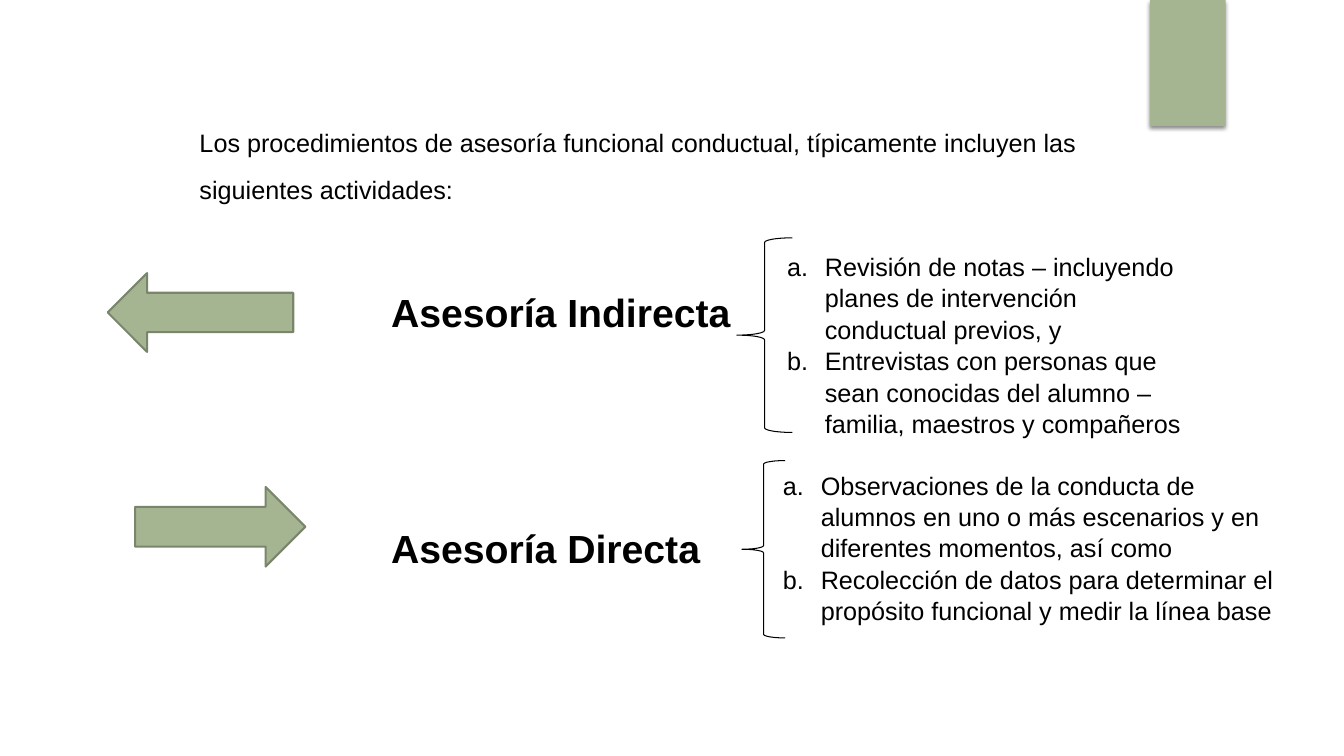
"""Build the slide on indirect and direct functional behaviour assessment."""
from dataclasses import dataclass

from lxml.etree import SubElement
from pptx import Presentation
from pptx.dml.color import RGBColor
from pptx.enum.shapes import MSO_SHAPE as Preset
from pptx.enum.text import MSO_AUTO_SIZE as AutoSize
from pptx.oxml.ns import qn
from pptx.shapes.autoshape import Shape
from pptx.slide import Slide
from pptx.text.text import TextFrame
from pptx.util import Pt


@dataclass(frozen=True)
class Theme:
    font: str = "Arial"
    sage: str = "A5B592"
    sage_edge: str = "7A866C"
    ink: str = "000000"
    body_size: float = 18
    heading_size: float = 28
    line_spacing: float = 1.04
    intro_spacing: float = 1.55
    heading_gap: float = 134
    list_indent: float = 27


@dataclass(frozen=True)
class Box:
    left: float
    top: float
    width: float
    height: float

    def lengths(self) -> tuple[Pt, Pt, Pt, Pt]:
        """Return the four lengths in points."""
        return Pt(self.left), Pt(self.top), Pt(self.width), Pt(self.height)


@dataclass(frozen=True)
class Assessment:
    heading: str
    arrow: Preset
    arrow_box: Box
    brace_box: Box
    list_box: Box
    activities: tuple[str, ...]


THEME = Theme()
INTRO = ("Los procedimientos de asesoría funcional conductual, "
         "típicamente incluyen las siguientes actividades:")
INTRO_BOX = Box(135.4, 75.6, 721.4, 68.4)
HEADINGS_BOX = Box(272.2, 200.9, 286.6, 211)
TAB_BOX = Box(821.5, 0, 54, 90)
ASSESSMENTS = (
    Assessment(
        "Asesoría Indirecta", Preset.LEFT_ARROW,
        Box(77, 195.1, 132.5, 56.2), Box(526.3, 169.9, 39.6, 139),
        Box(555.1, 175, 312.3, 159.8),
        ("Revisión de notas – incluyendo planes de intervención "
         "conductual previos, y",
         "Entrevistas con personas que sean conocidas del alumno – "
         "familia, maestros y compañeros"),
    ),
    Assessment(
        "Asesoría Directa", Preset.RIGHT_ARROW,
        Box(96.5, 347.8, 121.7, 56.9), Box(529.9, 329, 31, 126.7),
        Box(552.2, 331.2, 380.2, 138.2),
        ("Observaciones de la conducta de alumnos en uno o más escenarios "
         "y en diferentes momentos, así como",
         "Recolección de datos para determinar el propósito funcional "
         "y medir la línea base"),
    ),
)


def add_preset(slide: Slide, preset: Preset, box: Box, fill: str = "",
               edge: str = "", edge_width: float = 0) -> Shape:
    """Draw a preset shape; an empty colour means no fill or no line."""
    shape = slide.shapes.add_shape(preset, *box.lengths())
    shape.shadow.inherit = False
    if fill:
        shape.fill.solid()
        shape.fill.fore_color.rgb = RGBColor.from_string(fill)
    else:
        shape.fill.background()
    if edge:
        shape.line.color.rgb = RGBColor.from_string(edge)
        shape.line.width = Pt(edge_width)
    else:
        shape.line.fill.background()
    return shape


def add_tab(slide: Slide) -> None:
    """Draw the corner tab with its soft shadow."""
    tab = add_preset(slide, Preset.RECTANGLE, TAB_BOX, THEME.sage)
    effects = tab.element.spPr.find(qn("a:effectLst"))
    shadow = SubElement(effects, qn("a:outerShdw"), blurRad=str(Pt(3)),
                        dist=str(Pt(2)), dir="5400000", rotWithShape="0")
    color = SubElement(shadow, qn("a:srgbClr"), val=THEME.ink)
    SubElement(color, qn("a:alpha"), val="45000")


def add_text(slide: Slide, box: Box, lines: tuple[str, ...], size: float,
             spacing: float = THEME.line_spacing, bold: bool = False,
             lettered: bool = False) -> TextFrame:
    """Write one paragraph per line, lettered a., b. when asked."""
    frame = slide.shapes.add_textbox(*box.lengths()).text_frame
    frame.word_wrap = True
    frame.auto_size = AutoSize.SHAPE_TO_FIT_TEXT
    frame.text = "\n".join(lines)
    for paragraph in frame.paragraphs:
        paragraph.line_spacing = spacing
        if lettered:
            properties = paragraph._p.get_or_add_pPr()
            properties.set("marL", str(Pt(THEME.list_indent)))
            properties.set("indent", str(-Pt(THEME.list_indent)))
            SubElement(properties, qn("a:buFont"), typeface=THEME.font)
            SubElement(properties, qn("a:buAutoNum"), type="alphaLcPeriod")
        for run in paragraph.runs:
            run.font.name = THEME.font
            run.font.size = Pt(size)
            run.font.bold = bold
            run.font.color.rgb = RGBColor.from_string(THEME.ink)
    return frame


def add_assessment(slide: Slide, assessment: Assessment) -> None:
    """Draw the arrow, brace and activities of one assessment."""
    add_preset(slide, assessment.arrow, assessment.arrow_box,
               THEME.sage, THEME.sage_edge, 1.5)
    add_text(slide, assessment.list_box, assessment.activities,
             THEME.body_size, lettered=True)
    add_preset(slide, Preset.LEFT_BRACE, assessment.brace_box,
               edge=THEME.ink, edge_width=0.75)


def main() -> None:
    """Compose and save the slide."""
    deck = Presentation()
    deck.slide_width, deck.slide_height = Pt(960), Pt(540)
    slide = deck.slides.add_slide(deck.slide_layouts[6])
    add_tab(slide)
    for assessment in ASSESSMENTS:
        add_assessment(slide, assessment)
    headings = add_text(slide, HEADINGS_BOX,
                        tuple(item.heading for item in ASSESSMENTS),
                        THEME.heading_size, bold=True)
    headings.paragraphs[1].space_before = Pt(THEME.heading_gap)
    add_text(slide, INTRO_BOX, (INTRO,), THEME.body_size, THEME.intro_spacing)
    deck.save("out.pptx")


if __name__ == "__main__":
    main()
